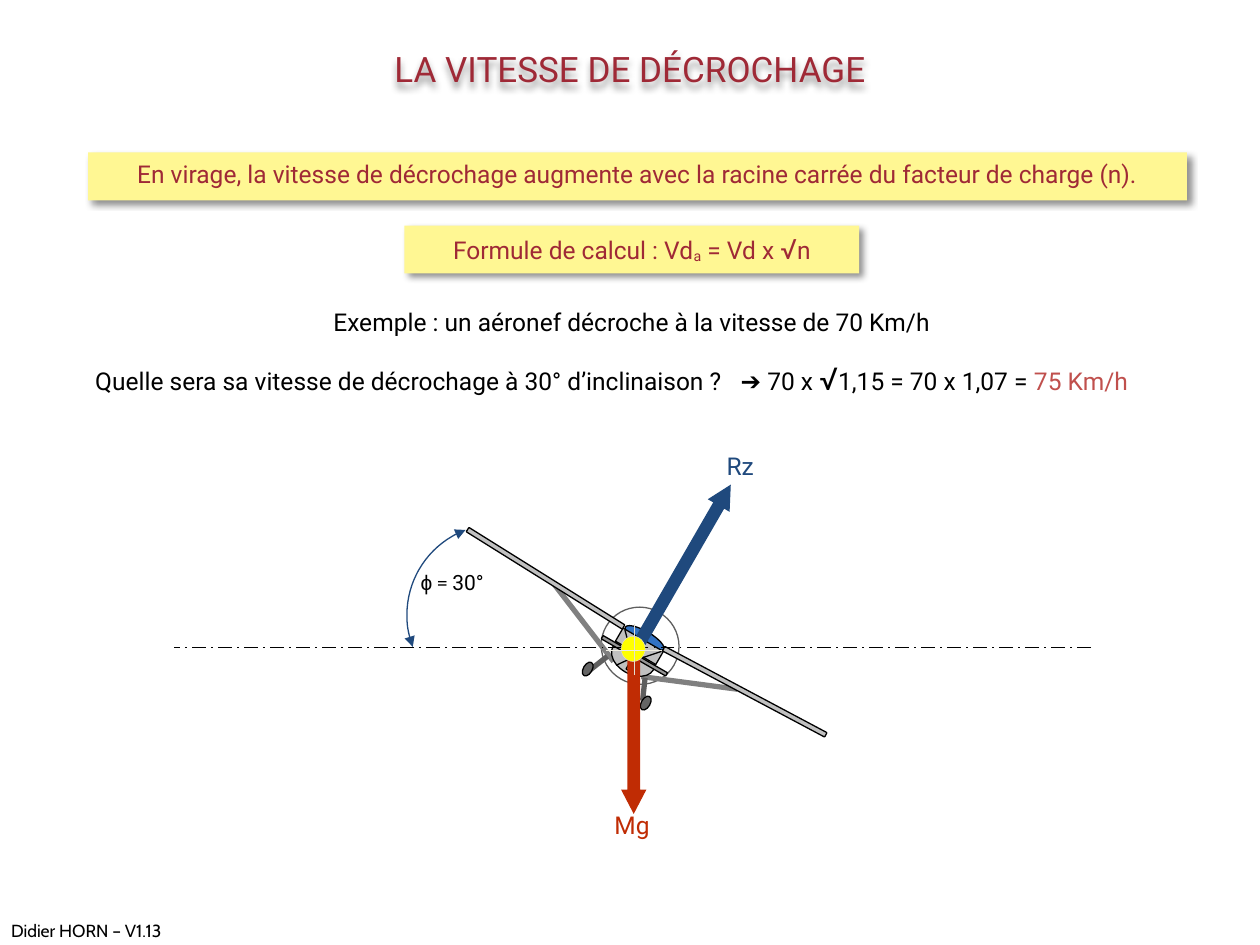
"""Build the slide on stall speed in a banked turn."""
import pptx
import pptx.util
import pptx.dml.color
import pptx.enum.dml
import pptx.enum.shapes
import pptx.enum.text
import pptx.oxml
import pptx.oxml.ns

RED, BLUE, RUST, BLACK = "9F2936", "1F497D", "C02C04", "000000"
PALE, GREY, DARK, MID = "FFF793", "C0C0C0", "5F5F5F", "808080"

TITLE = ((2.24, 0.33, 5.52, 0.39), "CENTER",
         [("LA VITESSE DE DÉCROCHAGE", 20, "Roboto", RED)])
BANNERS = [
    ((0.7, 1.21, 8.72, 0.38), "CENTER",
     [("En virage, la vitesse de décrochage augmente avec la racine carrée"
       " du facteur de charge (n).", 14, "Roboto", RED)]),
    ((3.21, 1.79, 3.61, 0.38), "CENTER",
     [("Formule de calcul : Vd", 14, "Roboto", RED),
      ("a", 14, "Roboto", RED, -9000),
      (" = Vd x ", 14, "Roboto", RED),
      ("√", 16, "Roboto", RED),
      ("n", 14, "Roboto", RED)]),
]
NOTES = [
    ((-0.01, 7.25, 1.5, 0.27), "LEFT",
     [("Didier HORN – V1.13 ©", 10, "Cabin", BLACK)]),
    ((0.39, 2.39, 9.25, 0.34), "CENTER",
     [("Exemple : un aéronef décroche à la vitesse de 70 Km/h", 14, "Roboto", BLACK)]),
    ((0.4, 2.86, 5.43, 0.34), "RIGHT",
     [("Quelle sera sa vitesse de décrochage à 30° d’inclinaison ?",
       14, "Roboto", BLACK)]),
    ((5.78, 2.8, 3.85, 0.4), "LEFT",
     [("➔", 14, "Arial", BLACK),
      (" 70 x ", 14, "Roboto", BLACK),
      ("√", 18, "Roboto", BLACK),
      ("1,15 = 70 x 1,07 =", 14, "Roboto", BLACK),
      (" 75 Km/h", 14, "Roboto", "C0504D")]),
    ((3.24, 4.47, 1.25, 0.3), "LEFT",
     [("ϕ", 12, "Arial", BLACK),
      (" = ", 12, "Calibri", BLACK),
      ("30°", 12, "Roboto", BLACK)]),
]
LIFT = ((5.46, 3.53, 0.83, 0.34), "CENTER", [("Rz", 14, "Roboto", BLUE)])
WEIGHT = ((4.22, 6.38, 1.64, 0.34), "CENTER", [("Mg ", 14, "Roboto", RUST)])

PLANE = [
    ("OVAL", (4.77, 4.82, 0.62, 0.61), 30, None, DARK),
    ("line", (4.87, 5.25, 4.4, 4.64), MID, 3),
    ("line", (5.09, 5.37, 5.85, 5.47), MID, 3),
    ("ROUNDED_RECTANGLE", (5.18, 5.47, 1.46, 0.04), 28, GREY, BLACK),
    ("OVAL", (4.94, 5.01, 0.35, 0.11), 30, "3172C4", BLACK),
    ("OVAL", (4.84, 5.1, 0.37, 0.25), 30, GREY, BLACK),
    ("RECTANGLE", (4.89, 5.07, 0.37, 0.12), 30, GREY, BLACK),
    ("ROUNDED_RECTANGLE", (4.86, 5.1, 0.47, 0.02), 300, "969696", BLACK),
    ("line", (5.02, 5.22, 4.89, 5.28), BLACK, 0.75),
    ("line", (5.04, 5.23, 5.05, 5.37), BLACK, 0.75),
    ("line", (4.82, 5.21, 4.68, 5.32), DARK, 3),
    ("line", (5.12, 5.38, 5.1, 5.56), DARK, 3),
    ("OVAL", (5.09, 5.52, 0.07, 0.12), 30, "656565", BLACK),
    ("line", (5.01, 5.19, 4.96, 5), BLACK, 0.75),
    ("line", (5.07, 5.23, 5.25, 5.17), BLACK, 0.75),
    ("ROUNDED_RECTANGLE", (3.6, 4.57, 1.46, 0.04), 32, GREY, BLACK),
    ("OVAL", (4.63, 5.25, 0.07, 0.12), 30, "656565", BLACK),
    ("ROUNDED_RECTANGLE", (4.74, 5.19, 0.59, 0.03), 30, "969696", BLACK),
]
ARC = dict(mid=(3.95, 4.88), radius=0.72, start=159.3, sweep=90)


def paint(form, code):
    form.solid()
    form.fore_color.rgb = pptx.dml.color.RGBColor.from_string(code)


def inches(vals):
    return [pptx.util.Inches(v) for v in vals]


def node(tag, **attrs):
    elm = pptx.oxml.parse_xml(f"<a:{tag} {pptx.oxml.ns.nsdecls('a')}/>")
    for key, val in attrs.items():
        elm.set(key, str(val))
    return elm


def shade(shape, angle):
    shape.shadow.inherit = False
    outer = node("outerShdw", blurRad=50800, dist=38100,
                 dir=angle * 60000, algn="tl", rotWithShape=0)
    color = node("srgbClr", val=BLACK)
    color.append(node("alpha", val=43000))
    outer.append(color)
    shape._element.spPr.find(pptx.oxml.ns.qn("a:effectLst")).append(outer)


def draw(host, kind, box, turn=0, fill=None, edge=None, width=0.75):
    kind = getattr(pptx.enum.shapes.MSO_SHAPE, kind)
    shape = host.shapes.add_shape(kind, *inches(box))
    shape.shadow.inherit = False
    shape.rotation = turn
    if fill:
        paint(shape.fill, fill)
    else:
        shape.fill.background()
    if edge:
        paint(shape.line.fill, edge)
        shape.line.width = pptx.util.Pt(width)
    else:
        shape.line.fill.background()
    return shape


def link(host, ends, color, width):
    line = host.shapes.add_connector(
        pptx.enum.shapes.MSO_CONNECTOR.STRAIGHT, *inches(ends))
    paint(line.line.fill, color)
    line.line.width = pptx.util.Pt(width)
    line._element.spPr.append(node("effectLst"))
    return line


def write(shape, align, runs):
    frame = shape.text_frame
    frame.word_wrap = True
    frame.vertical_anchor = pptx.enum.text.MSO_ANCHOR.TOP
    para = frame.paragraphs[0]
    para.alignment = getattr(pptx.enum.text.PP_ALIGN, align)
    for text, size, face, color, *base in runs:
        run = para.add_run()
        run.text = text
        run.font.size = pptx.util.Pt(size)
        run.font.name = face
        paint(run.font.fill, color)
        if base:
            run.font._element.set("baseline", str(base[0]))


def label(host, box, align, runs):
    shape = host.shapes.add_textbox(*inches(box))
    write(shape, align, runs)
    return shape


def sweep(host, mid, radius, start, sweep):
    box = (mid[0] - radius, mid[1] - radius, 2 * radius, 2 * radius)
    arc = draw(host, "ARC", box, edge=BLUE)
    for i, angle in enumerate((start, start + sweep)):
        arc.adjustments[i] = angle * 0.6
    for tag in ("headEnd", "tailEnd"):
        arc.line._get_or_add_ln().append(node(tag, type="triangle"))


def arrow(host, kind, box, turn, color):
    shape = draw(host, kind, box, turn, color)
    shape.adjustments[0] = 0.5
    shape.adjustments[1] = 0.96


def main():
    deck = pptx.Presentation()
    deck.slide_width, deck.slide_height = inches((10, 7.5))
    slide = deck.slides.add_slide(deck.slide_layouts[6])

    shade(label(slide, *TITLE), 90)
    for box, align, runs in BANNERS:
        banner = draw(slide, "RECTANGLE", box, fill=PALE)
        shade(banner, 45)
        write(banner, align, runs)

    plane = slide.shapes.add_group_shape()
    for kind, *rest in PLANE:
        if kind == "line":
            link(plane, *rest)
        else:
            draw(plane, kind, *rest)

    level = link(slide, (8.66, 5.14, 1.38, 5.14), BLACK, 1)
    level.line.dash_style = pptx.enum.dml.MSO_LINE.LONG_DASH_DOT
    sweep(slide, **ARC)
    for note in NOTES:
        label(slide, *note)

    lift = slide.shapes.add_group_shape()
    arrow(lift, "UP_ARROW", (5.34, 3.75, 0.2, 1.44), 30, BLUE)
    label(lift, *LIFT)

    mass = slide.shapes.add_group_shape()
    label(mass, *WEIGHT)
    arrow(mass, "DOWN_ARROW", (4.93, 5.18, 0.2, 1.28), 0, RUST)
    draw(mass, "OVAL", (4.93, 5.05, 0.19, 0.2), 0, "FFFF00", "E3DED1", 0.25)
    link(mass, (5.03, 4.95, 5.03, 5.36), "E3DED1", 0.25)
    link(mass, (5.25, 5.16, 4.81, 5.16), "EEECE1", 0.25)
    deck.save("out.pptx")


if __name__ == "__main__":
    main()
